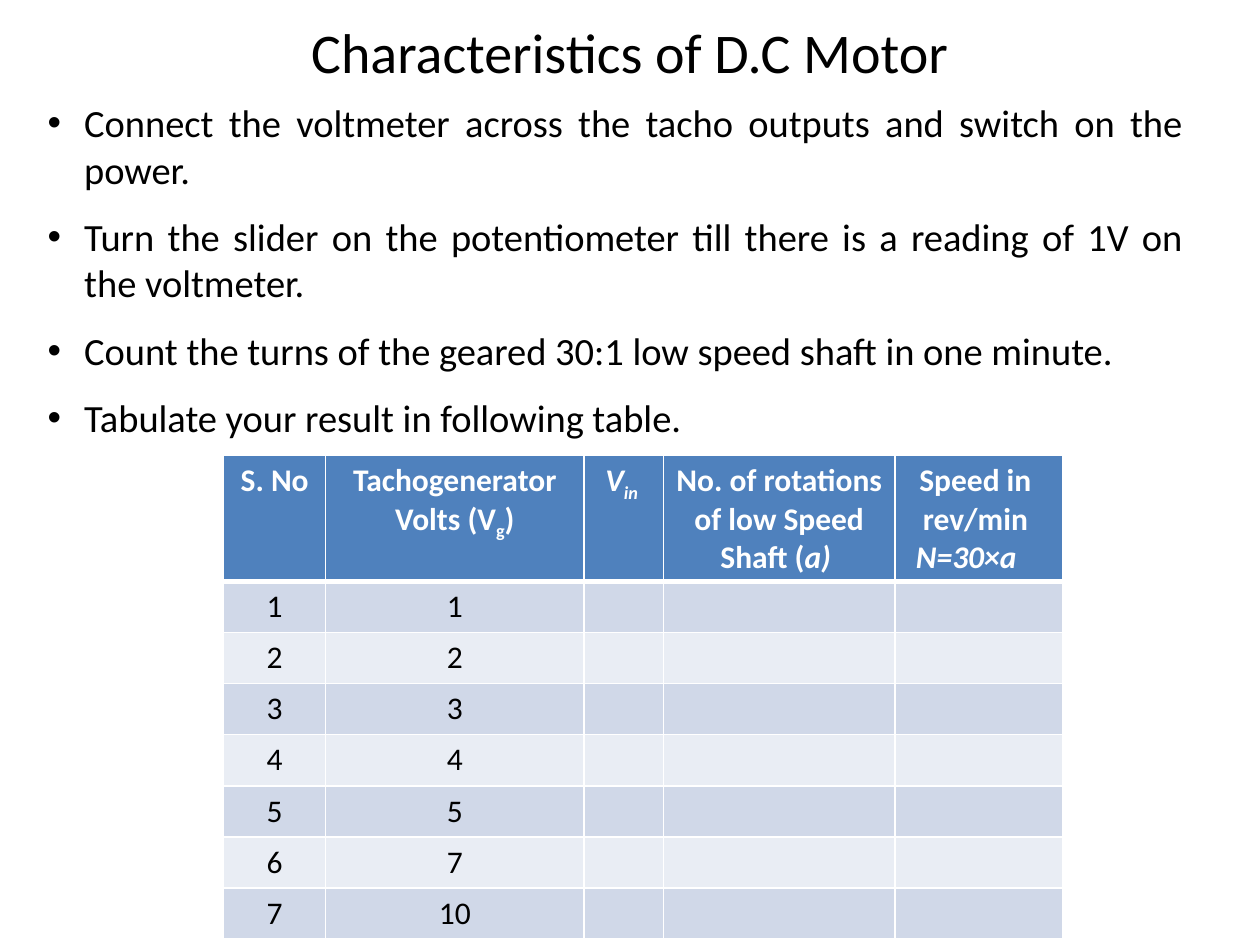
from dataclasses import dataclass

from lxml.etree import SubElement
from pptx import Presentation
from pptx.dml.color import RGBColor
from pptx.enum.text import MSO_ANCHOR, MSO_AUTO_SIZE, PP_ALIGN
from pptx.oxml.ns import qn
from pptx.util import Pt


@dataclass(frozen=True)
class Theme:
    """Colours, font and type sizes of the slide."""
    font: str = "Calibri"
    ink: str = "000000"
    white: str = "FFFFFF"
    header: str = "4F81BD"
    bands: tuple = ("D0D8E8", "E9EDF4")
    title_size: int = 32
    body_size: int = 22
    table_size: int = 18


THEME = Theme()
PLAIN, ITALIC = {"italic": False}, {"italic": True}
SUBSCRIPT = "-25000"

STEPS = [
    "Connect the voltmeter across the tacho outputs and switch on the power.",
    "Turn the slider on the potentiometer till there is a reading of 1V on the voltmeter.",
    "Count the turns of the geared 30:1 low speed shaft in one minute.",
    "Tabulate your result in following table.",
]
HEADINGS = [
    [[("S. No", PLAIN, None)]],
    [[("Tachogenerator Volts (V", PLAIN, None), ("g", PLAIN, SUBSCRIPT), (")", PLAIN, None)]],
    [[("V", ITALIC, None), ("in ", ITALIC, SUBSCRIPT)]],
    [[("No. of rotations of low Speed Shaft (", PLAIN, None), ("a) ", ITALIC, None)]],
    [[("Speed in ", PLAIN, None)], [("rev/min ", PLAIN, None)], [("N=30×a \t", ITALIC, None)]],
]
TACHO_VOLTS = [1, 2, 3, 4, 5, 7, 10]
COLUMN_WIDTHS = [58.32, 147.6, 45.36, 132.48, 95.76]
HEADER_HEIGHT, ROW_HEIGHT = 70.8, 29.2


def add_run(paragraph, text, size, color=THEME.ink, baseline=None, **formats):
    """Append a run in the theme font with the given format values."""
    run = paragraph.add_run()
    run.text = text
    for name, value in {"name": THEME.font, "size": Pt(size), **formats}.items():
        setattr(run.font, name, value)
    run.font.color.rgb = RGBColor.from_string(color)
    if baseline:
        run.font._element.set("baseline", baseline)


def add_text_frame(slide, box, **formats):
    """Add a wrapping text box and return its text frame."""
    frame = slide.shapes.add_textbox(*map(Pt, box)).text_frame
    for name, value in {"word_wrap": True, **formats}.items():
        setattr(frame, name, value)
    return frame


def add_title(slide, box):
    """Place the centred slide title in its box."""
    frame = add_text_frame(slide, box, vertical_anchor=MSO_ANCHOR.MIDDLE)
    heading = frame.paragraphs[0]
    heading.alignment = PP_ALIGN.CENTER
    add_run(heading, "Characteristics of D.C Motor", THEME.title_size)


def add_steps(slide, box):
    """Place the justified, bulleted procedure in its box."""
    frame = add_text_frame(slide, box, auto_size=MSO_AUTO_SIZE.SHAPE_TO_FIT_TEXT)
    for index, text in enumerate(STEPS):
        step = frame.add_paragraph() if index else frame.paragraphs[0]
        step.alignment = PP_ALIGN.JUSTIFY
        step.space_before = Pt(12.2 if index else 0)
        properties = step._p.get_or_add_pPr()
        properties.set("marL", str(Pt(20.88)))
        properties.set("indent", str(-Pt(20.88)))
        SubElement(properties, qn("a:buFont"), typeface="Arial")
        SubElement(properties, qn("a:buChar"), char="•")
        add_run(step, text, THEME.body_size)


def style_cell(cell, fill, top_width, bottom_width):
    """Give a cell white borders and a solid fill."""
    properties = cell._tc.get_or_add_tcPr()
    for side, width in {"L": 1, "R": 1, "T": top_width, "B": bottom_width}.items():
        border = SubElement(properties, qn(f"a:ln{side}"), w=str(Pt(width)))
        color = SubElement(border, qn("a:solidFill"))
        SubElement(color, qn("a:srgbClr"), val=THEME.white)
    cell.fill.solid()
    cell.fill.fore_color.rgb = RGBColor.from_string(fill)


def fill_cell(cell, lines, color, bold):
    """Write centred lines of formatted runs into a cell."""
    for index, runs in enumerate(lines):
        line = cell.text_frame.add_paragraph() if index else cell.text_frame.paragraphs[0]
        line.alignment = PP_ALIGN.CENTER
        for text, formats, baseline in runs:
            add_run(line, text, THEME.table_size, color, baseline, bold=bold, **formats)


def add_results_table(slide, left, top):
    """Place the results table with its top left corner at the given point."""
    heights = [HEADER_HEIGHT] + [ROW_HEIGHT] * len(TACHO_VOLTS)
    table = slide.shapes.add_table(
        len(heights), len(COLUMN_WIDTHS),
        Pt(left), Pt(top), Pt(sum(COLUMN_WIDTHS)), Pt(sum(heights)),
    ).table
    for column, width in zip(table.columns, COLUMN_WIDTHS):
        column.width = Pt(width)
    for row, height in zip(table.rows, heights):
        row.height = Pt(height)
    for cell, lines in zip(table.rows[0].cells, HEADINGS):
        style_cell(cell, THEME.header, 1, 3)
        fill_cell(cell, lines, THEME.white, True)
    for number, volts in enumerate(TACHO_VOLTS, 1):
        cells = list(table.rows[number].cells)
        for cell in cells:
            style_cell(cell, THEME.bands[(number - 1) % 2], 3 if number == 1 else 1, 1)
        for cell, value in zip(cells, (number, volts)):
            fill_cell(cell, [[(str(value), PLAIN, None)]], THEME.ink, False)


def main():
    """Build and save the slide."""
    deck = Presentation()
    deck.slide_width, deck.slide_height = Pt(720), Pt(540)
    slide = deck.slides.add_slide(deck.slide_layouts[6])
    add_title(slide, (36, 9.36, 648, 39.6))
    add_steps(slide, (20.16, 53.28, 663.12, 205.92))
    add_results_table(slide, 127.8, 260.2)
    deck.save("out.pptx")


if __name__ == "__main__":
    main()
